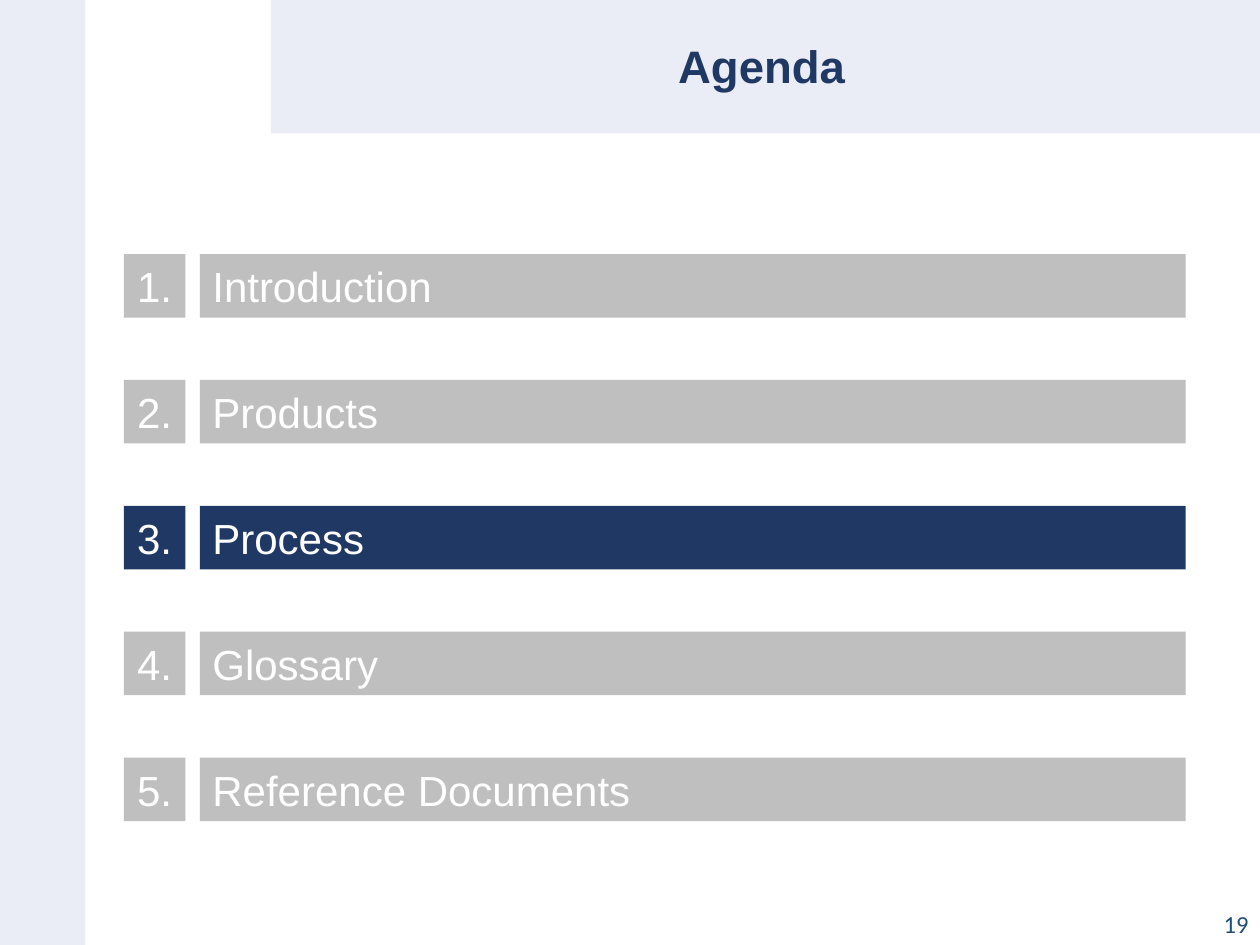
from pptx import Presentation
from pptx.dml.color import RGBColor
from pptx.enum.shapes import MSO_SHAPE
from pptx.enum.text import MSO_ANCHOR, PP_ALIGN
from pptx.util import Pt

RECTANGLE = MSO_SHAPE.RECTANGLE
MIDDLE, BOTTOM = MSO_ANCHOR.MIDDLE, MSO_ANCHOR.BOTTOM
LEFT, CENTER, RIGHT = PP_ALIGN.LEFT, PP_ALIGN.CENTER, PP_ALIGN.RIGHT

COLORS = {
    "band": "EAEDF6",
    "navy": "203864",
    "gray": "BFBFBF",
    "white": "FFFFFF",
    "number": "1F4E79",
}
TITLE_FONT = {"name": "Arial", "size": Pt(26), "bold": True}
ITEM_FONT = {"name": "Arial", "size": Pt(24)}
NUMBER_FONT = {"name": "Calibri", "size": Pt(14)}

PAGE_WIDTH, PAGE_HEIGHT = 720, 540
TOPICS = ["Introduction", "Products", "Process", "Glossary", "Reference Documents"]
CURRENT_TOPIC = "Process"


def color(name):
    return RGBColor.from_string(COLORS[name])


def add_bar(page, box, fill):
    bar = page.shapes.add_shape(RECTANGLE, *map(Pt, box))
    bar.shadow.inherit = False
    bar.fill.solid()
    bar.fill.fore_color.rgb = color(fill)
    bar.line.fill.background()
    return bar


def write(shape, text, font, text_color, align, anchor=MIDDLE):
    frame = shape.text_frame
    frame.word_wrap = True
    frame.vertical_anchor = anchor
    para = frame.paragraphs[0]
    para.alignment = align
    span = para.add_run()
    span.text = text
    for key, value in font.items():
        setattr(span.font, key, value)
    span.font.color.rgb = color(text_color)
    return para


def add_header(page, box):
    left, top, width, height = box
    add_bar(page, box, "band")
    # The title box starts slightly left of and below its band
    title = page.shapes.add_textbox(
        Pt(left - 4.3), Pt(top + 1.4), Pt(width + 4.3), Pt(height))
    para = write(title, "Agenda", TITLE_FONT, "navy", CENTER)
    para.line_spacing = 0.9


def add_agenda(page, box, row_height=36.3, number_width=35.2, gap=8.3):
    left, top, width, height = box
    pitch = (height - row_height) / (len(TOPICS) - 1)
    offset = number_width + gap
    for index, topic in enumerate(TOPICS):
        row_top = top + index * pitch
        fill = "navy" if topic == CURRENT_TOPIC else "gray"
        label = add_bar(page, (left + offset, row_top, width - offset, row_height), fill)
        write(label, topic, ITEM_FONT, "white", LEFT)
        number = add_bar(page, (left, row_top, number_width, row_height), fill)
        write(number, f"{index + 1}.", ITEM_FONT, "white", CENTER)


def add_page_number(page, box):
    number = page.shapes.add_textbox(*map(Pt, box))
    write(number, "19", NUMBER_FONT, "number", RIGHT, BOTTOM)


def main():
    deck = Presentation()
    deck.slide_width, deck.slide_height = Pt(PAGE_WIDTH), Pt(PAGE_HEIGHT)
    page = deck.slides.add_slide(deck.slide_layouts[6])

    # Side band, header, agenda rows and page number
    add_bar(page, (0, 0, 48.6, PAGE_HEIGHT), "band")
    add_header(page, (154.8, 0, PAGE_WIDTH - 154.8, 76.3))
    add_agenda(page, (70.8, 145.2, 606.8, 324))
    add_page_number(page, (558.5, 511.2, 162, 28.8))

    deck.save("out.pptx")


if __name__ == "__main__":
    main()
